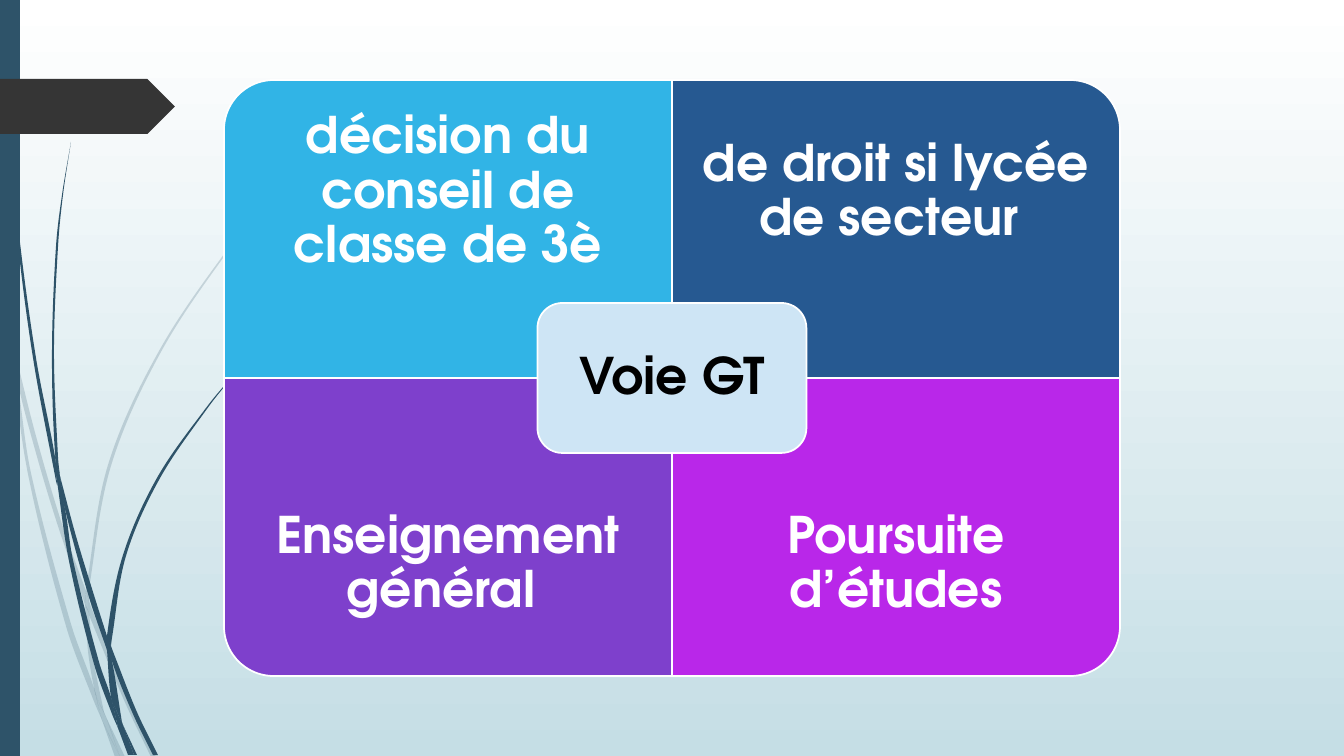
from math import dist

from lxml import etree
from pptx import Presentation
from pptx.dml.color import RGBColor
from pptx.enum.shapes import MSO_SHAPE
from pptx.enum.text import MSO_ANCHOR, PP_ALIGN
from pptx.oxml.ns import qn
from pptx.util import Emu, Pt

RECT, TAG = MSO_SHAPE.RECTANGLE, MSO_SHAPE.PENTAGON
ONE_ROUND, ROUNDED = MSO_SHAPE.ROUND_1_RECTANGLE, MSO_SHAPE.ROUNDED_RECTANGLE
MIDDLE, CENTER = MSO_ANCHOR.MIDDLE, PP_ALIGN.CENTER

PX = 914400 / 100.8
SLIDE_W, SLIDE_H = 1344, 756
FONT = "TeX Gyre Adventor"
COLORS = {
    "white": "FFFFFF", "black": "000000", "mist": "C5DEE5",
    "slate": "2E5369", "charcoal": "353535", "sky": "31B4E6",
    "navy": "265991", "violet": "7E40CC", "magenta": "B927E9",
    "pale": "CEE5F5",
}

# Text, fill and rotation, row by row; the rotation turns the round corner outwards
QUADRANTS = [
    [("décision du conseil de classe de 3è", "sky", 270),
     ("de droit si lycée de secteur ", "navy", 0)],
    [("Enseignement général ", "violet", 180),
     ("Poursuite d’études", "magenta", 90)],
]
HUB = "Voie GT"

GRID_X, GRID_Y, QUAD_W, QUAD_H = 224, 80, 448, 298
LABEL_H, LABEL_INSET = 224, 28
HUB_W, HUB_H, HUB_INSET = 269, 150, 22

# Pieces of grass blades: left edge, right edge
PALE_GRASS = [
    ([(0, 301), (10, 347), (11, 353)], [(0, 284), (9, 325), (11, 353)]),
    ([(14, 348), (17, 379), (36, 453), (58, 526), (85, 604)],
     [(14, 348), (36, 436), (62, 524), (86, 591)]),
    ([(89, 615), (124, 700), (151, 757)],
     [(89, 601), (93, 612), (128, 698), (156, 757)]),
    ([(106, 717), (120, 757)], [(106, 717), (125, 757)]),
    ([(11, 353), (28, 474), (66, 626), (93, 699), (102, 720)],
     [(11, 353), (17, 379), (31, 473), (71, 624), (94, 688), (100, 713), (102, 720)]),
    ([(85, 604), (88, 651), (94, 688), (97, 698), (106, 717)],
     [(85, 604), (89, 613), (92, 651), (104, 712), (106, 717)]),
    ([(314, 154), (270, 199), (230, 246), (159, 351), (108, 465), (86, 589), (86, 591)],
     [(314, 155), (270, 200), (231, 247), (161, 352), (111, 466), (89, 589), (89, 601)]),
    ([(102, 720), (115, 757)], [(102, 720), (120, 757)]),
    ([(86, 591), (85, 604), (89, 613)], [(86, 591), (89, 601), (89, 615)]),
    ([(94, 688), (100, 713), (102, 720), (120, 757)],
     [(94, 688), (97, 698), (106, 717), (120, 757)]),
]
DARK_GRASS = [
    ([(3, 0), (4, 48), (7, 111), (17, 235), (33, 358), (56, 481), (57, 485)],
     [(4, 0), (5, 48), (8, 110), (19, 234), (36, 358), (55, 457), (57, 485)]),
    ([(60, 476), (65, 509), (89, 597), (107, 650)],
     [(60, 476), (76, 536), (94, 595), (107, 636)]),
    ([(111, 646), (112, 661), (133, 714), (153, 755)],
     [(111, 646), (114, 654), (137, 712), (158, 755)]),
    ([(57, 481), (69, 561), (94, 664), (112, 714), (118, 728)],
     [(57, 481), (65, 509), (73, 560), (99, 662), (111, 697), (117, 723), (118, 728)]),
    ([(71, 142), (62, 195), (56, 247), (52, 352), (55, 453), (60, 476)],
     [(71, 142), (63, 195), (58, 247), (54, 352), (58, 457), (60, 476)]),
    ([(123, 725), (134, 755)], [(123, 725), (137, 755)]),
    ([(55, 453), (57, 481), (65, 509)], [(55, 453), (60, 476), (65, 509)]),
    ([(262, 347), (233, 376), (206, 408), (157, 478), (123, 555), (107, 636), (111, 646)],
     [(263, 347), (233, 377), (207, 409), (159, 480), (126, 556), (112, 638), (111, 646)]),
    ([(118, 728), (128, 755)], [(118, 728), (132, 755)]),
    ([(107, 650), (111, 697), (117, 712), (123, 725)],
     [(107, 650), (112, 661), (122, 722), (123, 725)]),
    ([(107, 636), (107, 650), (112, 661)], [(107, 636), (111, 646), (112, 661)]),
    ([(111, 697), (117, 723), (118, 728), (131, 755)],
     [(111, 697), (117, 712), (123, 725), (134, 755)]),
]


def px(n):
    return Emu(round(n * PX))


def rgb(name):
    return RGBColor.from_string(COLORS[name])


def paint(sp, fill, line=None, opacity=100):
    sp.shadow.inherit = False
    sp.fill.solid()
    sp.fill.fore_color.rgb = rgb(fill)
    if opacity < 100:
        color = sp.element.spPr.find(qn("a:solidFill")).find(qn("a:srgbClr"))
        etree.SubElement(color, qn("a:alpha"), val=str(opacity * 1000))
    if line:
        sp.line.color.rgb = rgb(line)
        sp.line.width = Pt(1.25)
    else:
        sp.line.fill.background()


def add_box(slide, kind, x, y, w, h, fill, line=None):
    sp = slide.shapes.add_shape(kind, px(x), px(y), px(w), px(h))
    paint(sp, fill, line)
    return sp


def write(sp, text, color="white", size=36, inset=LABEL_INSET):
    tf = sp.text_frame
    tf.word_wrap = True
    tf.vertical_anchor = MIDDLE
    tf.margin_left = tf.margin_right = tf.margin_top = tf.margin_bottom = px(inset)
    p = tf.paragraphs[0]
    p.alignment = CENTER
    p.line_spacing = 0.9
    r = p.add_run()
    r.text = text
    r.font.name, r.font.size, r.font.bold = FONT, Pt(size), True
    r.font.color.rgb = rgb(color)


def handle(point, toward, away, length):
    """Return a Bézier handle at point, parallel to the line from away to toward."""
    k = length / 3 / dist(toward, away)
    return tuple(p + (t - a) * k for p, t, a in zip(point, toward, away))


def curves(points):
    """Return two handles and an end point for each step of a smooth edge."""
    ends = [points[0], *points, points[-1]]
    return [(handle(b, c, a, dist(b, c)), handle(c, b, d, dist(b, c)), c)
            for a, b, c, d in zip(ends, ends[1:], ends[2:], ends[3:])]


def add_blade(slide, left, right, opacity):
    back = right[::-1]
    start, *rest = [(px(x), px(y)) for x, y in left + back]
    builder = slide.shapes.build_freeform(*start)
    builder.add_line_segments(rest, close=True)
    sp = builder.convert_to_shape()
    outline = next(sp.element.iter(qn("a:path")))
    for step in outline.findall(qn("a:lnTo")):
        outline.remove(step)
    close = outline.find(qn("a:close"))
    for step in curves(left) + [(left[-1], back[0], back[0])] + curves(back):
        bezier = etree.Element(qn("a:cubicBezTo"))
        for x, y in step:
            etree.SubElement(bezier, qn("a:pt"), x=str(px(x) - sp.left),
                             y=str(px(y) - sp.top))
        close.addprevious(bezier)
    paint(sp, "slate", opacity=opacity)


def add_quadrant(slide, row, col, text, fill, turn):
    x, y = GRID_X + col * QUAD_W, GRID_Y + row * QUAD_H
    w, h = (QUAD_H, QUAD_W) if turn % 180 else (QUAD_W, QUAD_H)
    sp = add_box(slide, ONE_ROUND, x + (QUAD_W - w) / 2, y + (QUAD_H - h) / 2,
                 w, h, fill, "white")
    sp.rotation = turn
    label_y = y + row * (QUAD_H - LABEL_H)
    label = slide.shapes.add_textbox(px(x), px(label_y), px(QUAD_W), px(LABEL_H))
    write(label, text)


def main():
    prs = Presentation()
    prs.slide_width, prs.slide_height = px(SLIDE_W), px(SLIDE_H)
    slide = prs.slides.add_slide(prs.slide_layouts[6])
    fill = slide.background.fill
    fill.gradient()
    fill.gradient_angle = 270
    for stop, position, color in zip(fill.gradient_stops, (0, 1), ("white", "mist")):
        stop.position = position
        stop.color.rgb = rgb(color)
    for grass, opacity in ((PALE_GRASS, 20), (DARK_GRASS, 100)):
        for left, right in grass:
            add_blade(slide, left, right, opacity)
    add_box(slide, RECT, 0, 0, 20, SLIDE_H, "slate")
    add_box(slide, TAG, 0, 79, 175, 55, "charcoal")
    for row, quadrants in enumerate(QUADRANTS):
        for col, quadrant in enumerate(quadrants):
            add_quadrant(slide, row, col, *quadrant)
    hub = add_box(slide, ROUNDED, GRID_X + QUAD_W - HUB_W / 2,
                  GRID_Y + QUAD_H - HUB_H / 2, HUB_W, HUB_H, "pale", "white")
    write(hub, HUB, color="black", inset=HUB_INSET)
    prs.save("out.pptx")


if __name__ == "__main__":
    main()
